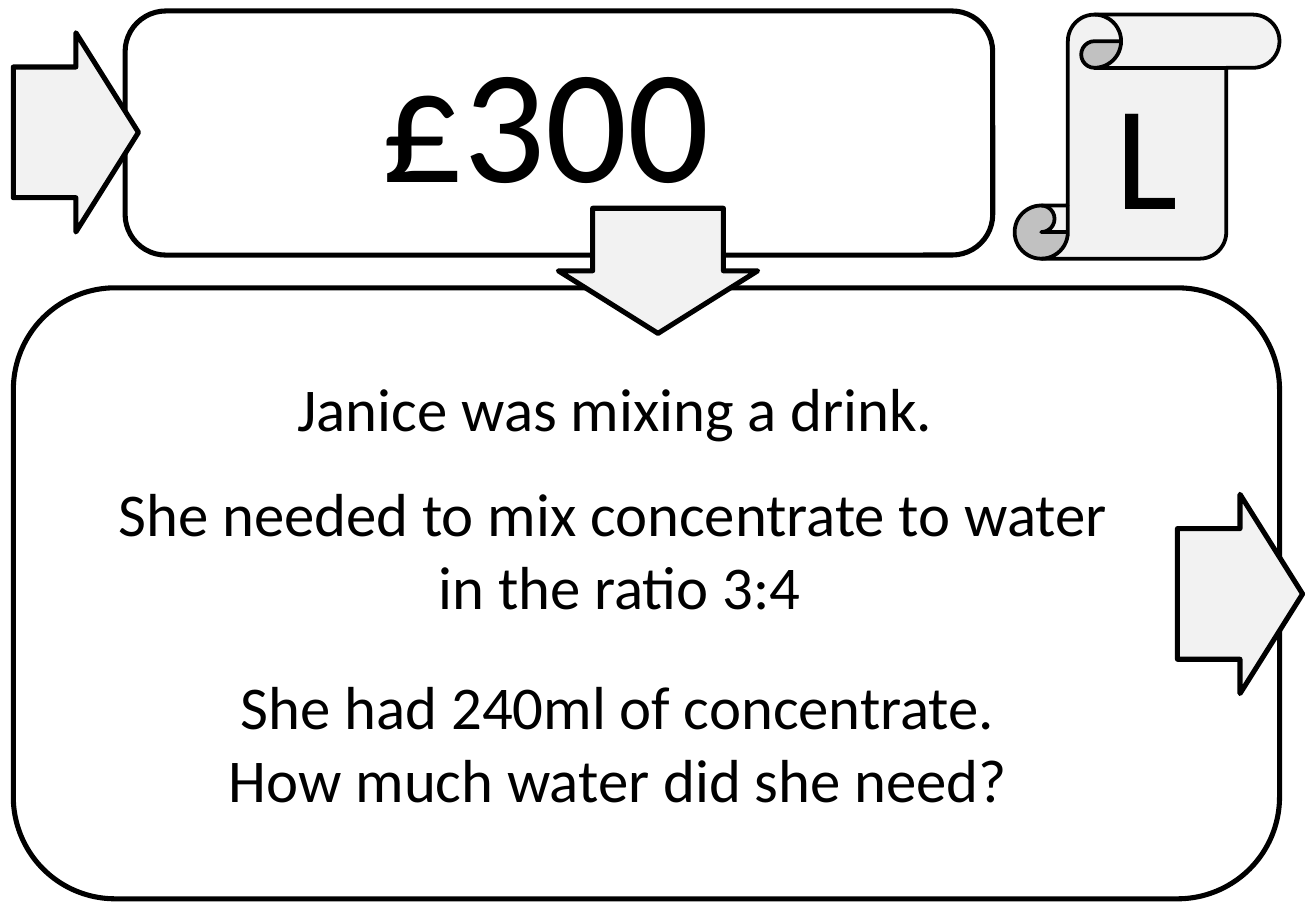
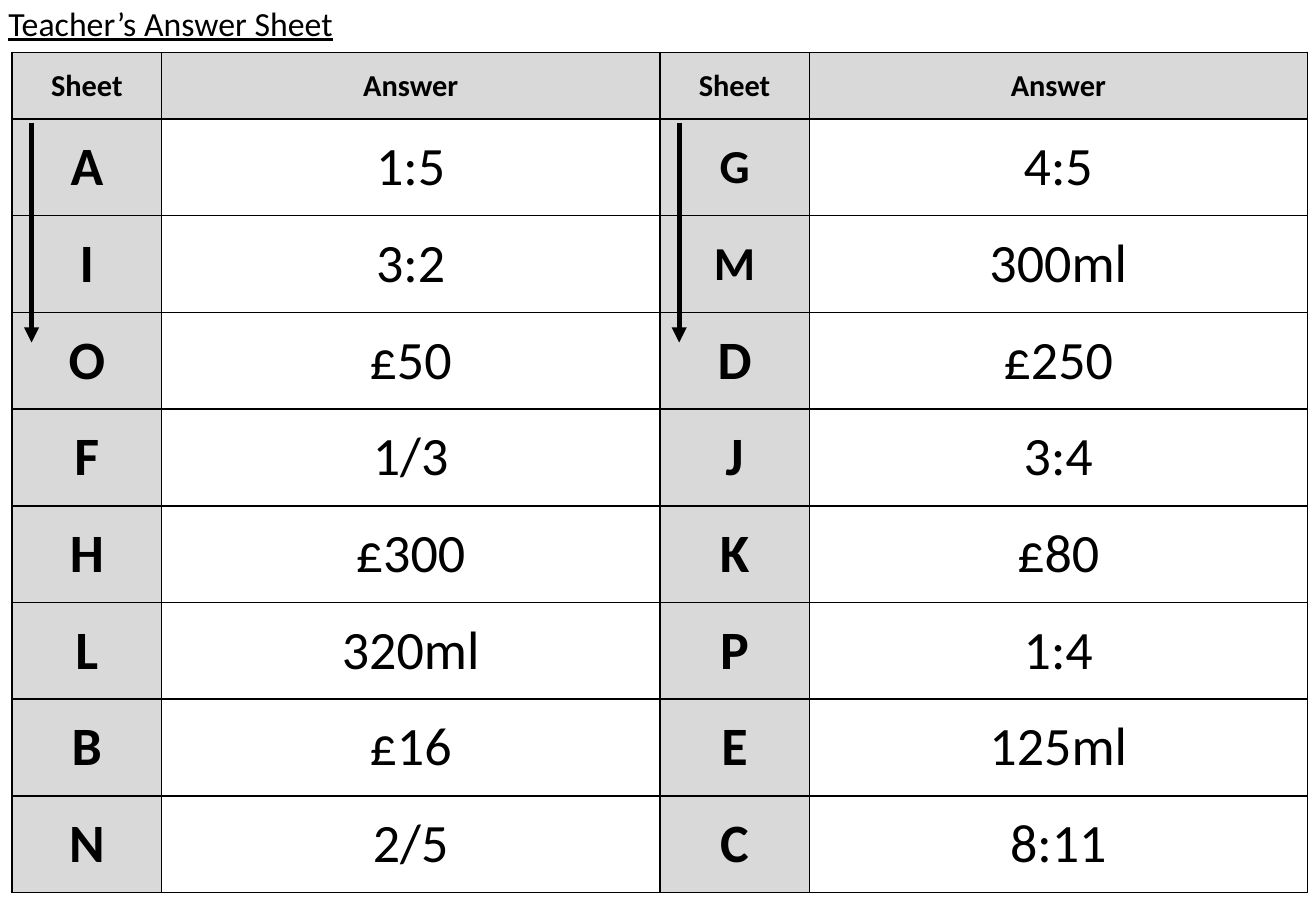
from dataclasses import dataclass

from lxml.etree import SubElement
from pptx import Presentation
from pptx.dml.color import RGBColor
from pptx.enum.shapes import MSO_CONNECTOR as Link, MSO_SHAPE as Kind
from pptx.enum.text import MSO_ANCHOR as Anchor, MSO_AUTO_SIZE as Fit, PP_ALIGN as Align
from pptx.oxml.ns import qn
from pptx.slide import Slide
from pptx.table import _Cell as Cell
from pptx.text.text import TextFrame
from pptx.util import Emu, Pt

PX = 9144
FONT = "Calibri"
BLACK = RGBColor(0, 0, 0)
WHITE = RGBColor(255, 255, 255)
PALE = RGBColor(0xF2, 0xF2, 0xF2)
GREY = RGBColor(0xD9, 0xD9, 0xD9)


def px(size: int) -> Emu:
    return Emu(size * PX)


@dataclass(frozen=True)
class Box:
    left: int
    top: int
    width: int
    height: int

    def emu(self) -> tuple[Emu, ...]:
        return tuple(px(n) for n in (self.left, self.top, self.width, self.height))


@dataclass(frozen=True)
class Form:
    kind: Kind
    box: Box
    adjust: tuple[float, ...]
    fill: RGBColor | None = None
    line: float = 3
    turn: int = 0
    text: str = ""


@dataclass(frozen=True)
class Label:
    box: Box
    lines: tuple[str, ...]
    size: int
    align: Align = Align.LEFT
    under: bool = False


@dataclass(frozen=True)
class Answer:
    sheet: str
    value: str
    size: int = 32


ROUND = (0.1667,)
ARROW = (0.656, 0.5)
FORMS = (
    Form(Kind.ROUNDED_RECTANGLE, Box(11, 237, 1042, 503), ROUND),
    Form(Kind.ROUNDED_RECTANGLE, Box(103, 9, 714, 201), ROUND),
    Form(Kind.RIGHT_ARROW, Box(969, 407, 103, 164), ARROW, PALE),
    Form(Kind.RIGHT_ARROW, Box(490, 141, 103, 164), ARROW, PALE, turn=90),
    Form(Kind.RIGHT_ARROW, Box(11, 27, 103, 164), ARROW, PALE),
    Form(Kind.VERTICAL_SCROLL, Box(835, 12, 218, 201), (0.218,), PALE, 2.25, text="L"),
)
LABELS = (
    Label(Box(235, 300, 548, 71), ("Janice was mixing a drink.",), 36),
    Label(Box(304, 12, 293, 172), ("£300",), 96),
    Label(
        Box(84, 387, 852, 131),
        ("She needed to mix concentrate to water ", "in the ratio 3:4"),
        36,
        Align.CENTER,
    ),
    Label(
        Box(169, 546, 679, 131),
        ("She had 240ml of concentrate.", "How much water did she need?"),
        36,
        Align.CENTER,
    ),
)
TITLE = Label(Box(-3, -3, 290, 44), ("Teacher’s Answer Sheet",), 20, under=True)

GRID = Box(10, 43, 1066, 692)
HEAD = 55
COLS = (123, 410) * 2
LEFT = (
    Answer("A", "1:5"), Answer("I", "3:2"), Answer("O", "£50"), Answer("F", "1/3"),
    Answer("H", "£300"), Answer("L", "320ml"), Answer("B", "£16"), Answer("N", "2/5"),
)
RIGHT = (
    Answer("G", "4:5", 28), Answer("M", "300ml", 28), Answer("D", "£250"), Answer("J", "3:4"),
    Answer("K", "£80"), Answer("P", "1:4"), Answer("E", "125ml"), Answer("C", "8:11"),
)


def write(frame: TextFrame, lines: tuple[str, ...], size: int, align: Align,
          bold: bool = False, under: bool = False) -> None:
    for i, line in enumerate(lines):
        para = frame.add_paragraph() if i else frame.paragraphs[0]
        para.alignment = align
        run = para.add_run()
        run.text = line
        font = run.font
        font.name, font.size = FONT, Pt(size)
        font.bold, font.underline = bold, under
        font.color.rgb = BLACK


def draw_form(slide: Slide, form: Form) -> None:
    shape = slide.shapes.add_shape(form.kind, *form.box.emu())
    shape.shadow.inherit = False
    shape.rotation = form.turn
    for i, value in enumerate(form.adjust):
        shape.adjustments[i] = value
    if form.fill is None:
        shape.fill.background()
    else:
        shape.fill.solid()
        shape.fill.fore_color.rgb = form.fill
    shape.line.color.rgb = BLACK
    shape.line.width = Pt(form.line)
    if form.text:
        shape.text_frame.vertical_anchor = Anchor.MIDDLE
        write(shape.text_frame, (form.text,), 88, Align.CENTER)


def draw_label(slide: Slide, label: Label) -> None:
    frame = slide.shapes.add_textbox(*label.box.emu()).text_frame
    frame.word_wrap = False
    frame.auto_size = Fit.SHAPE_TO_FIT_TEXT
    write(frame, label.lines, label.size, label.align, under=label.under)


def draw_arrow(slide: Slide, left: int, top: int, end: int) -> None:
    arrow = slide.shapes.add_connector(Link.STRAIGHT, px(left), px(top), px(left), px(end))
    arrow.line.color.rgb = BLACK
    arrow.line.width = Pt(3)
    SubElement(arrow.line._get_or_add_ln(), qn("a:tailEnd"), type="triangle")
    SubElement(arrow._element.spPr, qn("a:effectLst"))


def fill_cell(cell: Cell, text: str, size: int, bold: bool, fill: RGBColor) -> None:
    cell.vertical_anchor = Anchor.MIDDLE
    write(cell.text_frame, (text,), size, Align.CENTER, bold)
    props = cell._tc.get_or_add_tcPr()
    for side in ("lnL", "lnR", "lnT", "lnB"):
        edge = SubElement(props, qn(f"a:{side}"), w=str(Pt(1)))
        paint = SubElement(edge, qn("a:solidFill"))
        SubElement(paint, qn("a:srgbClr"), val=str(BLACK))
    cell.fill.solid()
    cell.fill.fore_color.rgb = fill


def draw_grid(slide: Slide) -> None:
    count = len(LEFT)
    table = slide.shapes.add_table(count + 1, len(COLS), *GRID.emu()).table
    table.first_row = table.horz_banding = False
    for col, width in zip(table.columns, COLS):
        col.width = px(width)
    for i, row in enumerate(table.rows):
        row.height = Emu(px(GRID.height - HEAD) // count) if i else px(HEAD)
    for side, answers in enumerate((LEFT, RIGHT)):
        col = side * 2
        for i, name in enumerate(("Sheet", "Answer")):
            fill_cell(table.cell(0, col + i), name, 18, True, GREY)
        for row, item in enumerate(answers, 1):
            fill_cell(table.cell(row, col), item.sheet, item.size, True, GREY)
            fill_cell(table.cell(row, col + 1), item.value, 32, False, WHITE)


def main() -> None:
    deck = Presentation()
    deck.slide_width, deck.slide_height = px(1083), px(750)
    blank = deck.slide_layouts[6]

    card = deck.slides.add_slide(blank)
    for form in FORMS:
        draw_form(card, form)
    for label in LABELS:
        draw_label(card, label)

    key = deck.slides.add_slide(blank)
    draw_grid(key)
    draw_label(key, TITLE)
    for side in range(2):
        draw_arrow(key, GRID.left + 16 + side * sum(COLS[:2]), 101, 282)

    deck.save("out.pptx")


if __name__ == "__main__":
    main()
